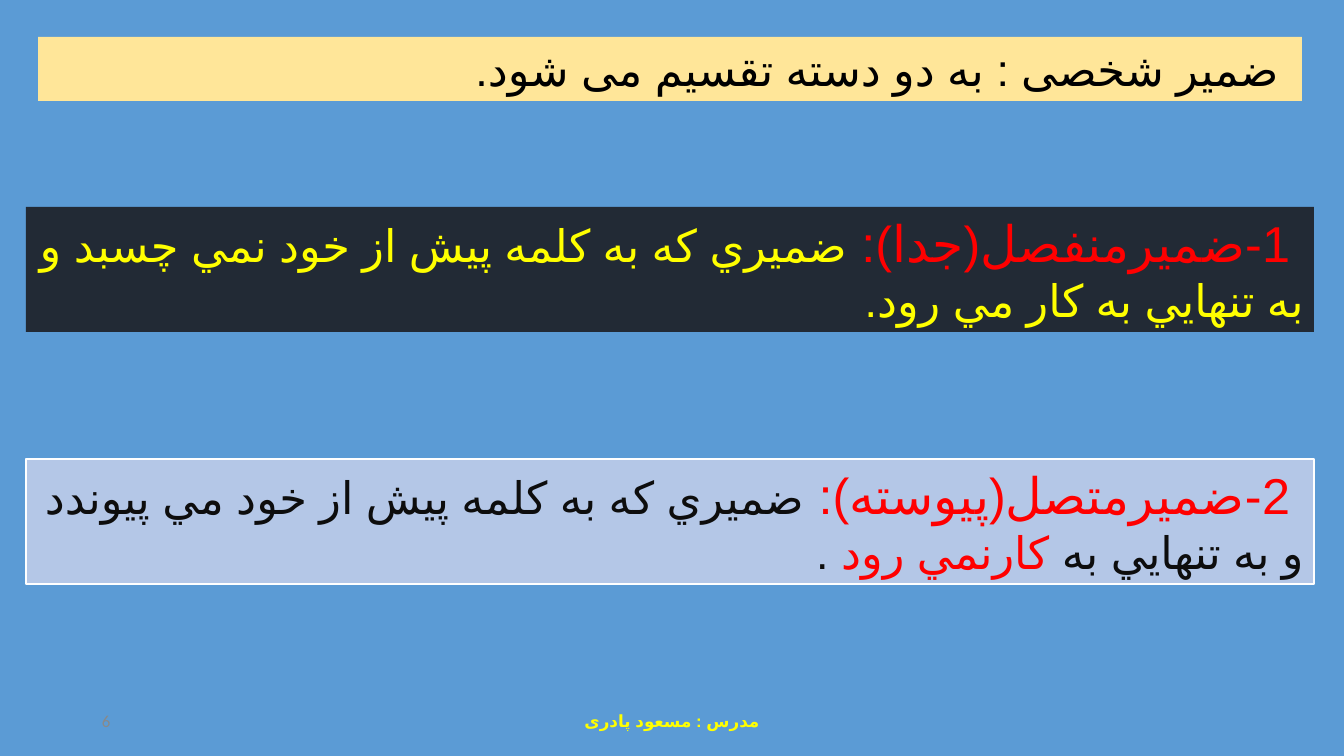
from dataclasses import dataclass
from lxml.etree import SubElement as Sub
from pptx import Presentation
from pptx.dml.color import RGBColor as Rgb
from pptx.enum.lang import MSO_LANGUAGE_ID as Lang
from pptx.enum.shapes import MSO_SHAPE as Kind
from pptx.enum.text import MSO_ANCHOR as Anchor, MSO_AUTO_SIZE as Fit, PP_ALIGN as Align
from pptx.oxml.ns import qn
from pptx.util import Pt

PX = 12192000 / 1344


@dataclass(frozen=True)
class Theme:
    """Colours, fonts and type sizes of the slide."""
    font: str = "Calibri"
    script: str = "Arial"
    back: str = "5B9BD5"
    dark: str = "222A35"
    cream: str = "FFE699"
    pale: str = "B4C7E7"
    white: str = "FFFFFF"
    black: str = "000000"
    ink: str = "0D0D0D"
    red: str = "FF0000"
    gold: str = "FFFF00"
    grey: str = "898989"
    head: int = 36
    body: int = 32
    small: int = 12


def emu(*px):
    """Turn pixels into EMU."""
    return [round(n * PX) for n in px]


def write(par, text, *, font, script, size, color, bold=False):
    """Add a formatted Persian run to a paragraph."""
    run = par.add_run()
    run.text = text
    run.font.name = font
    run.font.size = Pt(size)
    run.font.bold = bold
    run.font.color.rgb = Rgb.from_string(color)
    run.font.language_id = Lang.FARSI
    Sub(run._r.get_or_add_rPr(), qn("a:cs"), typeface=script)


class Deck:
    """Holds the theme and the current slide."""

    def __init__(self, theme):
        """Open a title-only slide with a plain background."""
        self.theme = theme
        self.prs = Presentation()
        self.prs.slide_width, self.prs.slide_height = emu(1344, 756)
        self.slide = self.prs.slides.add_slide(self.prs.slide_layouts[5])
        self.paint(self.slide.background, theme.back)

    def paint(self, item, color):
        """Fill an item with one colour."""
        item.fill.solid()
        item.fill.fore_color.rgb = Rgb.from_string(color)

    def fill_text(self, shape, runs, align=Align.RIGHT, anchor=Anchor.TOP, rtl=True):
        """Set right-to-left text from (text, size, color, bold) runs."""
        frame = shape.text_frame
        frame.word_wrap = True
        frame.auto_size = Fit.NONE
        frame.vertical_anchor = anchor
        par = frame.paragraphs[0]
        par.alignment = align
        par._p.get_or_add_pPr().set("rtl", str(int(rtl)))
        for text, size, color, *bold in runs:
            write(par, text, font=self.theme.font, script=self.theme.script,
                  size=size, color=color, bold=any(bold))

    def title(self, box, fill, runs):
        """Place the title on a coloured band."""
        shape = self.slide.shapes.title
        shape.left, shape.top, shape.width, shape.height = emu(*box)
        self.paint(shape, fill)
        self.fill_text(shape, runs)

    def panel(self, box, fill, runs, line=None):
        """Add a filled rectangle with text."""
        shape = self.slide.shapes.add_shape(Kind.RECTANGLE, *emu(*box))
        shape.shadow.inherit = False
        self.paint(shape, fill)
        if line:
            shape.line.color.rgb = Rgb.from_string(line)
            shape.line.width = Pt(1.5)
        else:
            shape.line.fill.background()
        self.fill_text(shape, runs)

    def label(self, box, runs, **style):
        """Add a text box centred on its height."""
        shape = self.slide.shapes.add_textbox(*emu(*box))
        self.fill_text(shape, runs, anchor=Anchor.MIDDLE, **style)


def main():
    """Build and save the slide."""
    look = Theme()
    deck = Deck(look)
    deck.title((38, 37, 1264, 64), look.cream, [
        (" ضمیر شخصی : به دو دسته تقسیم می شود.", look.body, look.black)])
    deck.panel((26, 207, 1288, 125), look.dark, [
        (" ", look.head, look.black),
        ("1-ضمیرمنفصل(جدا): ", look.head, look.red),
        ("ضميري كه به كلمه پيش از خود نمي چسبد و به تنهايي به كار مي رود.",
         look.body, look.gold)])
    deck.panel((26, 459, 1288, 125), look.pale, [
        (" 2-ضمیرمتصل(پیوسته): ", look.head, look.red),
        ("ضميري كه به كلمه پيش از خود مي پيوندد و به تنهايي به ", look.body, look.ink),
        ("كارنمي رود ", look.body, look.red),
        (". ", look.body, look.ink)], line=look.white)
    deck.label((445, 701, 454, 40), [
        ("مدرس : مسعود پادری", look.small, look.gold, True)], align=Align.CENTER)
    deck.label((92, 701, 302, 40), [("6", look.small, look.grey)],
               align=Align.LEFT, rtl=False)
    deck.prs.save("out.pptx")


if __name__ == "__main__":
    main()
